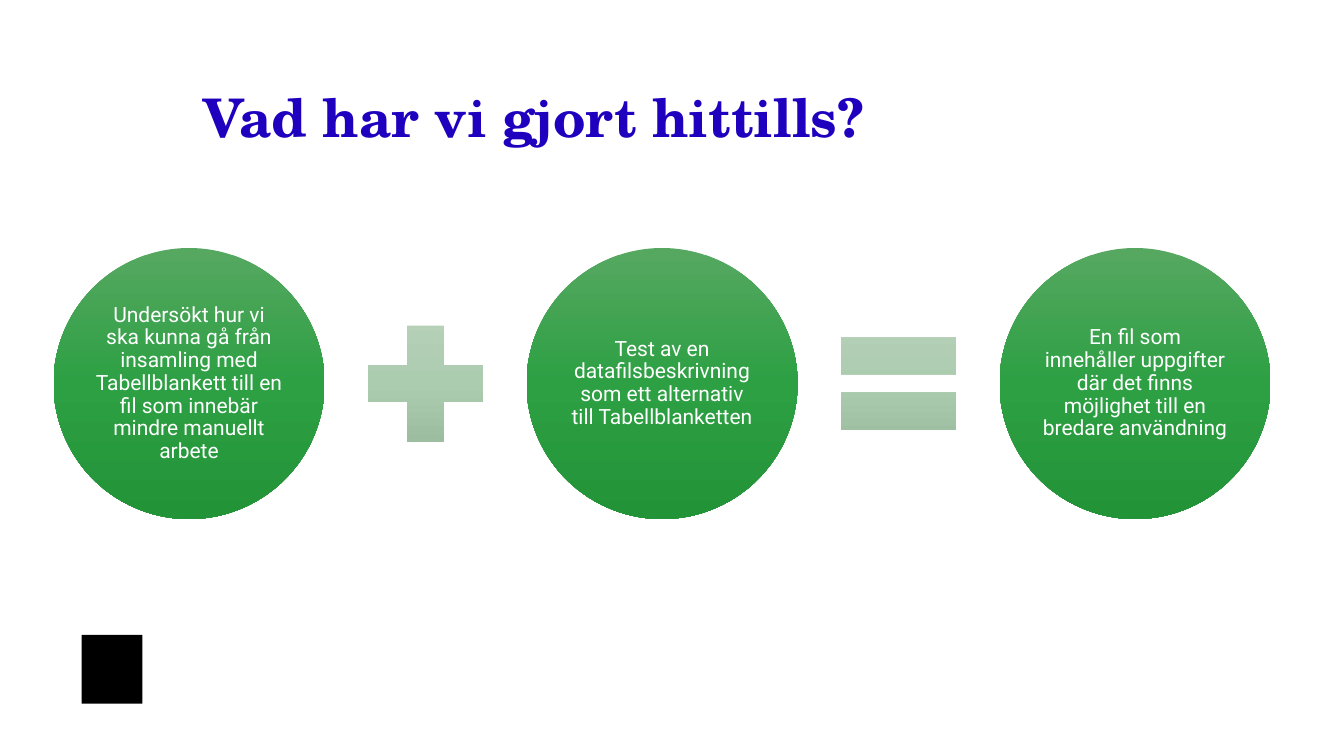
from copy import deepcopy

from pptx import Presentation
from pptx import util as u
from pptx.dml.color import RGBColor
from pptx.enum import shapes, text
from pptx.oxml.ns import qn

GREEN = ("56A861", "2DA043", "239338")
PALE = ("B8D2BA", "ACCCB0", "97B79B")
STEPS = (
    "Undersökt hur vi ska kunna gå från insamling med Tabellblankett till en fil som innebär mindre manuellt arbete",
    "Test av en datafilsbeskrivning som ett alternativ till Tabellblanketten",
    "En fil som innehåller uppgifter där det finns möjlighet till en bredare användning",
)
OPERATORS = (shapes.MSO_SHAPE.MATH_PLUS, shapes.MSO_SHAPE.MATH_EQUAL)
LEFT, TOP, PITCH = 1.35, 6.25, 11.92
CIRCLE, SIGN = 6.83, 3.96


def rgb(value):
    return RGBColor.from_string(value)


def set_font(p, name, size, color, bold=False):
    p.font.name = name
    p.font.size = u.Pt(size)
    p.font.bold = bold
    p.font.color.rgb = rgb(color)


def set_margins(tf, margin):
    tf.margin_left = tf.margin_right = tf.margin_top = tf.margin_bottom = u.Cm(margin)


def add_shape(s, kind, left, top, width, height):
    sp = s.shapes.add_shape(kind, u.Cm(left), u.Cm(top), u.Cm(width), u.Cm(height))
    sp.shadow.inherit = False
    sp.line.fill.background()
    return sp


def set_gradient(sp, colors):
    sp.fill.gradient()
    sp.fill.gradient_angle = 270
    stops = sp._element.spPr.find(qn("a:gradFill")).find(qn("a:gsLst"))
    stops.insert(1, deepcopy(stops[0]))
    for i, (stop, color) in enumerate(zip(sp.fill.gradient_stops, colors)):
        stop.position = i / (len(colors) - 1)
        stop.color.rgb = rgb(color)


def add_title(s, content):
    title = s.shapes.title
    title.left, title.top = u.Cm(5.13), u.Cm(2.26)
    title.width, title.height = u.Cm(23.65), u.Cm(3.68)
    tf = title.text_frame
    tf.text = content
    tf.auto_size = text.MSO_AUTO_SIZE.NONE
    tf.vertical_anchor = text.MSO_ANCHOR.TOP
    set_margins(tf, 0)
    p = tf.paragraphs[0]
    p.alignment = text.PP_ALIGN.LEFT
    p.line_spacing = u.Pt(42)
    set_font(p, "TeX Gyre Schola", 38, "1E00BE", True)


def add_circle(s, left, content):
    sp = add_shape(s, shapes.MSO_SHAPE.OVAL, left, TOP, CIRCLE, CIRCLE)
    set_gradient(sp, GREEN)
    tf = sp.text_frame
    tf.text = content
    tf.word_wrap = True
    tf.vertical_anchor = text.MSO_ANCHOR.MIDDLE
    set_margins(tf, 0.05)
    p = tf.paragraphs[0]
    p.alignment = text.PP_ALIGN.CENTER
    p.line_spacing = 0.9
    set_font(p, "Roboto", 15, "FFFFFF")


def add_operator(s, left, kind):
    sp = add_shape(s, kind, left, TOP + (CIRCLE - SIGN) / 2, SIGN, SIGN)
    set_gradient(sp, PALE)


def add_logo_block(s):
    sp = add_shape(s, shapes.MSO_SHAPE.RECTANGLE, 2.06, 16, 1.53, 1.73)
    sp.fill.solid()
    sp.fill.fore_color.rgb = rgb("000000")


def main():
    prs = Presentation()
    prs.slide_width, prs.slide_height = u.Cm(33.87), u.Cm(19.05)
    s = prs.slides.add_slide(prs.slide_layouts[5])
    add_logo_block(s)
    add_title(s, "Vad har vi gjort hittills?")
    for i, step in enumerate(STEPS):
        add_circle(s, LEFT + i * PITCH, step)
    gap = (PITCH - CIRCLE - SIGN) / 2
    for i, kind in enumerate(OPERATORS):
        add_operator(s, LEFT + i * PITCH + CIRCLE + gap, kind)
    prs.save("out.pptx")


if __name__ == "__main__":
    main()
